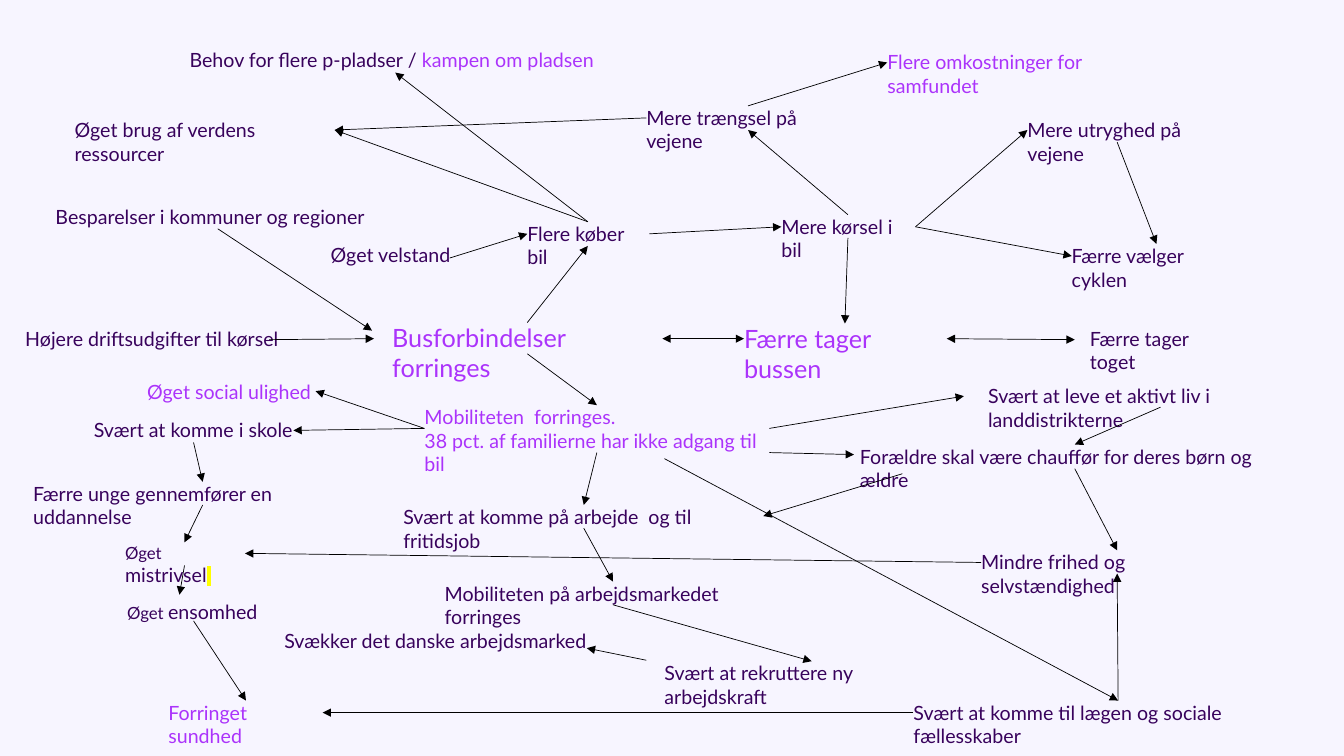
from lxml import etree
from pptx import Presentation
from pptx.dml.color import RGBColor
from pptx.enum.shapes import MSO_CONNECTOR
from pptx.enum.text import MSO_ANCHOR, MSO_AUTO_SIZE
from pptx.oxml.ns import qn
from pptx.util import Inches, Pt

DARK, ACCENT = "38025C", "AB33FB"


def add_label(left, top, width, *pieces, height=0.24):
    """Add a text box made of (text, size, colour) pieces on one paragraph; a line break in the
    first piece starts a new paragraph."""
    label = slide.shapes.add_textbox(Inches(left), Inches(top), Inches(width), Inches(height))
    frame = label.text_frame
    frame.margin_left = frame.margin_right = frame.margin_top = frame.margin_bottom = 0
    frame.word_wrap = True
    frame.auto_size = MSO_AUTO_SIZE.SHAPE_TO_FIT_TEXT
    frame.vertical_anchor = MSO_ANCHOR.TOP
    frame.text = pieces[0][0]
    styled = [(p.runs[0], *pieces[0][1:]) for p in frame.paragraphs]
    for text, size, colour in pieces[1:]:
        run = frame.paragraphs[-1].add_run()
        run.text = text
        styled.append((run, size, colour))
    for run, size, colour in styled:
        run.font.size = Pt(size)
        run.font.color.rgb = RGBColor.from_string(colour)
        run.font.name = "Lato"
    return label


def add_arrow(start, end, both_ways=False):
    arrow = slide.shapes.add_connector(MSO_CONNECTOR.STRAIGHT, *map(Inches, start + end))
    arrow.line.width = Pt(0.5)
    arrow.line.color.rgb = RGBColor.from_string("000000")
    outline = arrow.line._get_or_add_ln()
    if both_ways:
        etree.SubElement(outline, qn("a:headEnd"), type="triangle")
    etree.SubElement(outline, qn("a:tailEnd"), type="triangle")
    etree.SubElement(arrow._element.spPr, qn("a:effectLst"))


deck = Presentation()
deck.slide_width, deck.slide_height = Inches(13.33), Inches(7.5)
slide = deck.slides.add_slide(deck.slide_layouts[6])
slide.background.fill.solid()
slide.background.fill.fore_color.rgb = RGBColor.from_string("F7F5FF")

# Main themes
add_label(3.89, 3.2, 2.68, ("Busforbindelser forringes", 18, ACCENT), height=0.3)
add_label(7.38, 3.21, 2.01, ("Færre tager bussen", 18, ACCENT), height=0.3)

# Highlighted consequences
highlighted = [
    (8.8, 0.5, 2.79, "Flere omkostninger for samfundet"),
    (1.46, 3.77, 1.67, "Øget social ulighed"),
    (1.67, 6.95, 1.54, "Forringet sundhed"),
]
for left, top, width, text in highlighted:
    add_label(left, top, width, (text, 14, ACCENT))
add_label(4.21, 4.02, 3.42,
          ("Mobiliteten  forringes.\n38 pct. af familierne har ikke adgang til bil", 14, ACCENT),
          height=0.47)

# Causes and effects
factors = [
    (10.81, 3.24, 1.41, "Færre tager toget"),
    (5.23, 2.2, 1.21, "Flere køber bil"),
    (7.75, 2.13, 1.32, "Mere kørsel i bil"),
    (6.41, 1.05, 2.02, "Mere trængsel på vejene"),
    (10.63, 2.42, 1.67, "Færre vælger cyklen"),
    (10.19, 1.17, 2.08, "Mere utryghed på vejene"),
    (9.8, 3.81, 3.42, "Svært at leve et aktivt liv i landdistrikterne"),
    (8.53, 4.41, 4.27, "Forældre skal være chauffør for deres børn og ældre"),
    (9.73, 5.46, 2.69, "Mindre frihed og selvstændighed"),
    (4, 5.01, 3.56, "Svært at komme på arbejde  og til fritidsjob"),
    (4.41, 5.77, 3.34, "Mobiliteten på arbejdsmarkedet forringes"),
    (9.06, 6.95, 4.05, "Svært at komme til lægen og sociale fællesskaber"),
    (0.93, 4.15, 1.98, "Svært at komme i skole"),
    (0.33, 4.78, 3.37, "Færre unge gennemfører en uddannelse"),
    (6.59, 6.56, 2.91, "Svært at rekruttere ny arbejdskraft"),
    (0.55, 2.03, 3.22, "Besparelser i kommuner og regioner"),
    (0.25, 3.24, 2.59, "Højere driftsudgifter til kørsel"),
    (3.28, 2.41, 1.29, "Øget velstand"),
    (2.82, 6.24, 3.07, "Svækker det danske arbejdsmarked"),
    (0.74, 1.17, 2.58, "Øget brug af verdens ressourcer"),
]
for left, top, width, text in factors:
    add_label(left, top, width, (text, 14, DARK))

# Labels with mixed formatting
add_label(1.88, 0.48, 4.07, ("Behov for flere p-pladser / ", 14, DARK),
          ("kampen om pladsen", 14, ACCENT))
add_label(1.26, 5.95, 2.02, ("Øget ", 12, DARK), ("ensomhed", 14, DARK))
distress = add_label(1.24, 5.38, 1.19, ("Øget ", 12, DARK), ("mistrivsel", 14, DARK),
                     (" ", 12, DARK))
marked = distress.text_frame.paragraphs[0].runs[-1]._r.rPr
highlight = etree.Element(qn("a:highlight"))
etree.SubElement(highlight, qn("a:srgbClr"), val="FFFF00")
marked.find(qn("a:latin")).addprevious(highlight)

# Influences in both directions
add_arrow((6.57, 3.36), (7.38, 3.36), both_ways=True)
add_arrow((9.39, 3.36), (10.66, 3.37), both_ways=True)

# One-way influences, grouped by where they start
influences = [
    # Causes of poorer bus services and more car buying
    ((2.16, 2.27), (3.69, 3.28)),
    ((2.67, 3.37), (3.71, 3.36)),
    ((4.46, 2.56), (5.23, 2.32)),
    # Poorer bus services
    ((5.23, 3.2), (5.83, 2.44)),
    ((5.23, 3.51), (5.92, 4.02)),
    # More cars and more driving
    ((5.83, 2.2), (3.32, 1.29)),
    ((5.83, 2.2), (3.92, 0.72)),
    ((6.44, 2.32), (7.75, 2.25)),
    ((8.41, 2.13), (7.42, 1.29)),
    ((8.41, 2.36), (8.38, 3.21)),
    ((9.08, 2.25), (10.63, 2.54)),
    ((9.08, 2.25), (10.19, 1.29)),
    ((11.08, 1.41), (11.47, 2.42)),
    ((7.42, 1.05), (8.8, 0.62)),
    ((6.41, 1.17), (3.32, 1.29)),
    # Reduced mobility
    ((4.21, 4.25), (3.13, 3.88)),
    ((4.21, 4.25), (2.91, 4.27)),
    ((7.63, 4.25), (9.56, 3.93)),
    ((7.63, 4.49), (8.47, 4.51)),
    ((5.92, 4.49), (5.79, 5.01)),
    ((6.59, 4.55), (11.09, 6.95)),
    # School, well-being and health
    ((1.92, 4.39), (2.01, 4.78)),
    ((2.01, 5.01), (1.83, 5.38)),
    ((1.83, 5.61), (1.78, 5.9)),
    ((1.92, 6.16), (2.44, 6.95)),
    # Work
    ((5.79, 5.24), (6.08, 5.77)),
    ((6.08, 6), (8.05, 6.56)),
    ((6.41, 6.55), (5.82, 6.43)),
    # Families and rural life
    ((11.51, 4.04), (10.66, 4.41)),
    ((8.95, 4.7), (7.57, 5.12)),
    ((10.66, 4.65), (11.08, 5.46)),
    ((9.73, 5.58), (2.43, 5.49)),
    ((11.09, 6.95), (11.08, 5.69)),
    ((9.06, 7.07), (3.2, 7.07)),
]
for start, end in influences:
    add_arrow(start, end)

deck.save("out.pptx")
